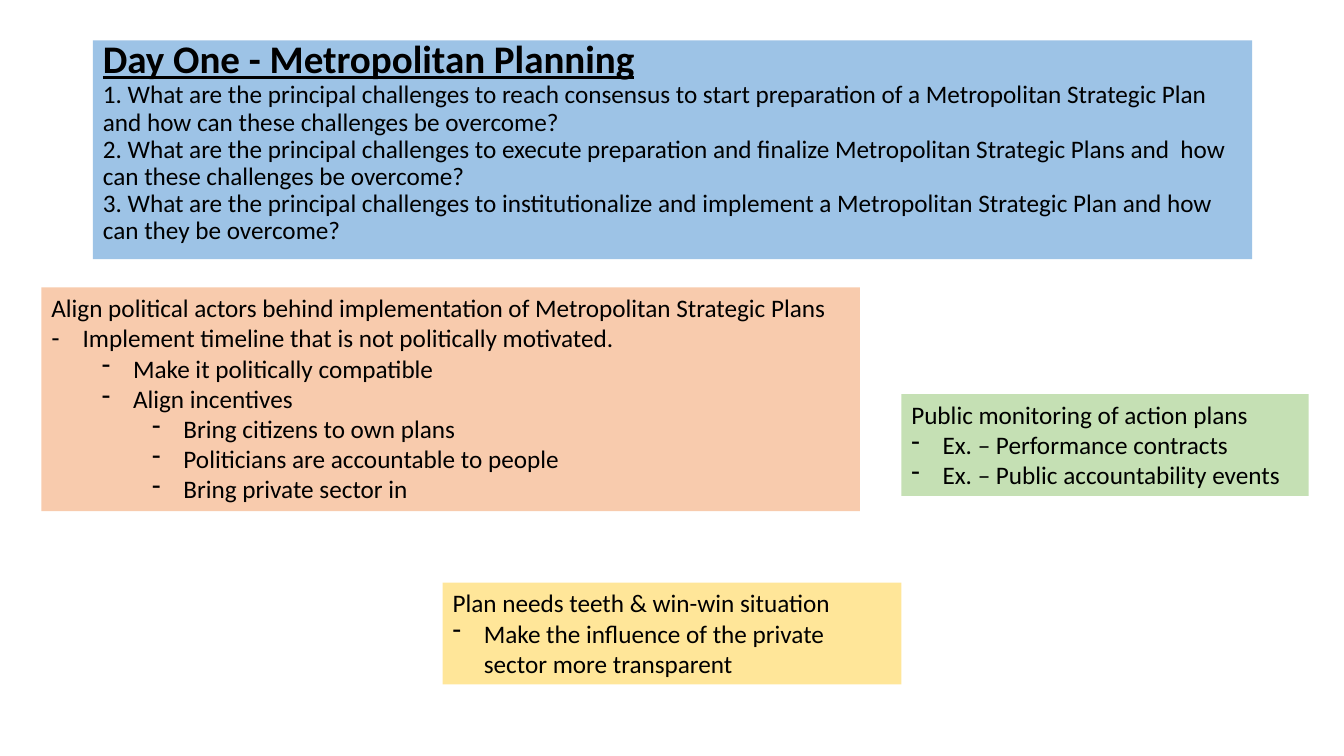
from dataclasses import dataclass

from lxml.etree import SubElement
from pptx import Presentation
from pptx.dml.color import RGBColor as Color
from pptx.enum.text import MSO_ANCHOR as Anchor, MSO_AUTO_SIZE as Fit, PP_ALIGN as Align
from pptx.oxml.ns import qn
from pptx.util import Inches, Pt


@dataclass(frozen=True)
class Theme:
    font: str = "Calibri"
    ink: str = "000000"
    blue: str = "9DC3E6"
    peach: str = "F8CBAD"
    green: str = "C5E0B4"
    gold: str = "FFE699"
    head: float = 27.9
    text: float = 18
    hang: float = 0.31
    step: float = 0.5


@dataclass(frozen=True)
class Note:
    """A coloured box: a lead line, then (level, text) items."""
    left: float
    top: float
    width: float
    height: float
    fill: str
    lead: str
    items: tuple[tuple[int, str], ...]


THEME = Theme()
TITLE = "Day One - Metropolitan Planning"
ASKS = (
    "1. What are the principal challenges to reach consensus to start preparation of a "
    "Metropolitan Strategic Plan and how can these challenges be overcome?",
    "2. What are the principal challenges to execute preparation and finalize "
    "Metropolitan Strategic Plans and  how can these challenges be overcome?",
    "3. What are the principal challenges to institutionalize and implement a "
    "Metropolitan Strategic Plan and how can they be overcome?",
)
ACTORS = Note(
    0.41, 2.85, 8.12, 2.22, THEME.peach,
    "Align political actors behind implementation of Metropolitan Strategic Plans",
    ((0, "Implement timeline that is not politically motivated."),
     (1, "Make it politically compatible"),
     (1, "Align incentives"),
     (2, "Bring citizens to own plans"),
     (2, "Politicians are accountable to people"),
     (2, "Bring private sector in")))
SIDE = (
    Note(8.94, 3.91, 4.04, 1.01, THEME.green,
         "Public monitoring of action plans",
         ((0, "Ex. – Performance contracts"),
          (0, "Ex. – Public accountability events"))),
    Note(4.39, 5.78, 4.55, 1.01, THEME.gold,
         "Plan needs teeth & win-win situation",
         ((0, "Make the influence of the private sector more transparent"),)),
)


def place(shape, left: float, top: float, width: float, height: float, fill: str) -> None:
    shape.left, shape.top = Inches(left), Inches(top)
    shape.width, shape.height = Inches(width), Inches(height)
    shape.fill.solid()
    shape.fill.fore_color.rgb = Color.from_string(fill)
    shape.text_frame.word_wrap = True
    shape.text_frame.auto_size = Fit.NONE


def write(frame, text: str, *, size: float = THEME.text, bold: bool = False,
          line: bool = False, gap: float = 1.0, level: int | None = None) -> None:
    """Add one paragraph; a level gives it a dash and an indent."""
    first = frame.paragraphs[0]
    para = frame.add_paragraph() if first.runs else first
    para.alignment = Align.LEFT
    para.line_spacing = gap
    para.space_before = para.space_after = Pt(0)
    props = para._p.get_or_add_pPr()
    if level is None:
        props.set("marL", "0")
        props.set("indent", "0")
        SubElement(props, qn("a:buNone"))
    else:
        para.level = level
        props.set("marL", str(Inches(THEME.hang + level * THEME.step)))
        props.set("indent", str(-Inches(THEME.hang)))
        SubElement(props, qn("a:buFontTx"))
        SubElement(props, qn("a:buChar"), char="-")
    run = para.add_run()
    run.text = text
    font = run.font
    font.name, font.size = THEME.font, Pt(size)
    font.bold, font.underline = bold, line
    font.color.rgb = Color.from_string(THEME.ink)


def draw(shape, note: Note) -> None:
    place(shape, note.left, note.top, note.width, note.height, note.fill)
    write(shape.text_frame, note.lead)
    for level, text in note.items:
        write(shape.text_frame, text, level=level)


def main() -> None:
    deck = Presentation()
    deck.slide_width, deck.slide_height = Inches(13.33), Inches(7.5)
    slide = deck.slides.add_slide(deck.slide_layouts[1])

    title = slide.shapes.title
    place(title, 0.92, 0.4, 11.5, 2.17, THEME.blue)
    frame = title.text_frame
    frame.vertical_anchor = Anchor.MIDDLE
    frame.margin_bottom = Inches(0.19)
    write(frame, TITLE, size=THEME.head, bold=True, line=True, gap=0.9)
    for ask in ASKS:
        write(frame, ask, gap=0.9)

    draw(slide.placeholders[1], ACTORS)
    for note in SIDE:
        draw(slide.shapes.add_textbox(0, 0, 0, 0), note)
    deck.save("out.pptx")


if __name__ == "__main__":
    main()
